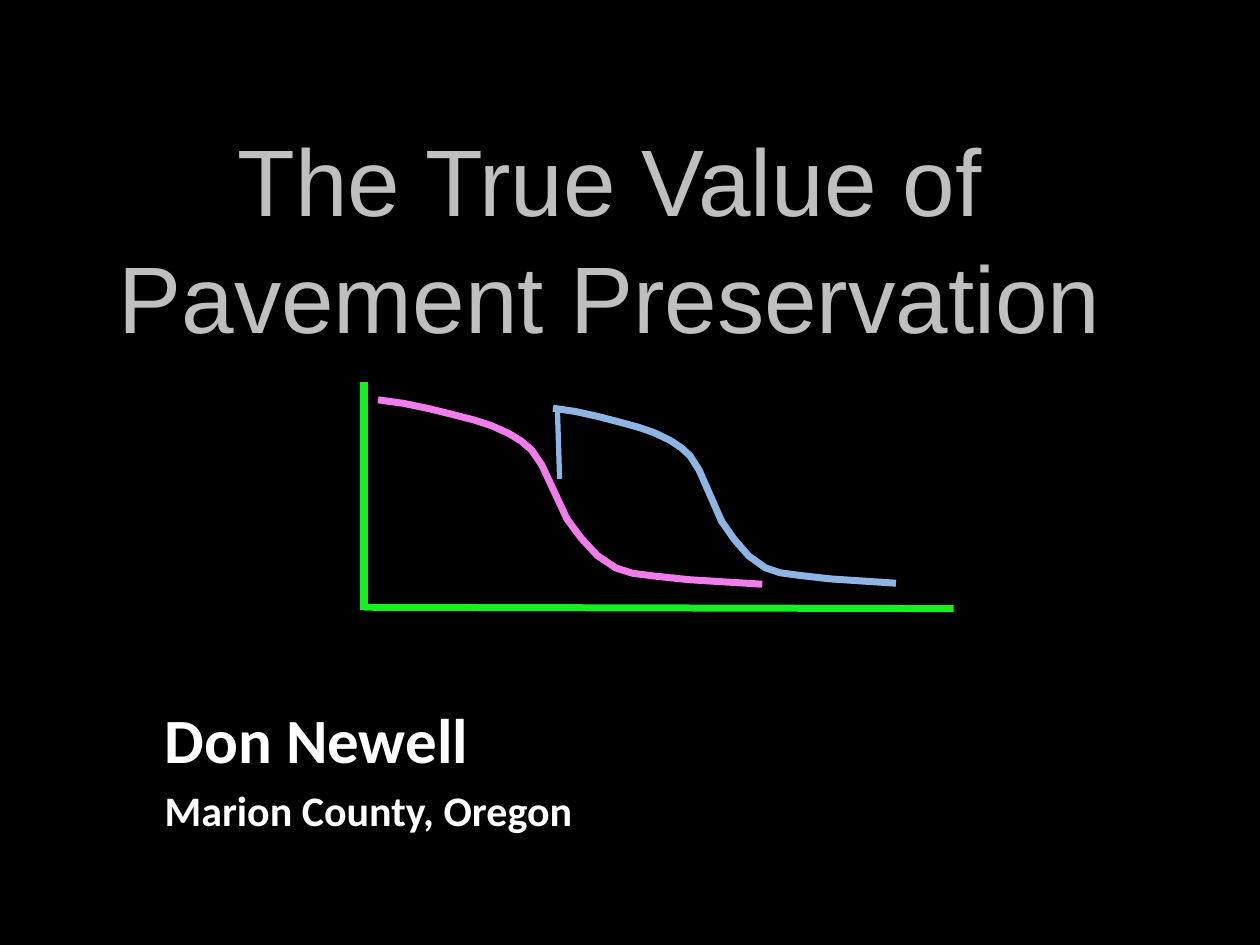
from lxml.etree import SubElement
from pptx import Presentation
from pptx.dml.color import RGBColor
from pptx.enum.shapes import MSO_CONNECTOR
from pptx.enum.text import MSO_ANCHOR, PP_ALIGN
from pptx.oxml.ns import qn
from pptx.util import Pt

BLACK = RGBColor(0x00, 0x00, 0x00)
WHITE = RGBColor(0xFF, 0xFF, 0xFF)
GRAY = RGBColor(0xBF, 0xBF, 0xBF)
GREEN = RGBColor(0x17, 0xEF, 0x21)
PINK = RGBColor(0xF2, 0x7C, 0xEC)
BLUE = RGBColor(0x8E, 0xB4, 0xE3)

presentation = Presentation()
presentation.slide_width = Pt(720)
presentation.slide_height = Pt(540)
slide = presentation.slides.add_slide(presentation.slide_layouts[6])
slide.background.fill.solid()
slide.background.fill.fore_color.rgb = BLACK

# Title
title = slide.shapes.add_textbox(Pt(42.5), Pt(45), Pt(612), Pt(178.5)).text_frame
title.word_wrap = True
title.vertical_anchor = MSO_ANCHOR.MIDDLE
title.text = "The True Value of\vPavement Preservation"
paragraph = title.paragraphs[0]
paragraph.alignment = PP_ALIGN.CENTER
paragraph.line_spacing = 1.04
paragraph.font.name = "Arial"
paragraph.font.size = Pt(54)
paragraph.font.color.rgb = GRAY

# Presenter
presenter = slide.shapes.add_textbox(Pt(87), Pt(397), Pt(504), Pt(103)).text_frame
presenter.word_wrap = True
presenter.text = "Don Newell\nMarion County, Oregon"
for paragraph, size in zip(presenter.paragraphs, (36, 24)):
    paragraph.space_before = Pt(size * 0.2)
    paragraph.font.name = "Calibri"
    paragraph.font.size = Pt(size)
    paragraph.font.bold = True
    paragraph.font.color.rgb = WHITE

# Pavement condition over time, without and with a treatment
diagram = slide.shapes.add_group_shape().shapes


def add_line(start, end, color, width):
    line = diagram.add_connector(
        MSO_CONNECTOR.STRAIGHT, *(Pt(value) for value in (*start, *end)))
    line.line.color.rgb = color
    line.line.width = Pt(width)
    SubElement(line._element.spPr, qn("a:effectLst"))


def add_decay_curve(left, top, width, height, color):
    """Draw the decay curve scaled to fill the given box."""
    points = [(Pt(left + x * width / 219.6), Pt(top + y * height / 105.8))
              for x, y in DECAY]
    builder = diagram.build_freeform(*points[0])
    builder.add_line_segments(points[1:], close=False)
    curve = builder.convert_to_shape()
    curve.shadow.inherit = False
    curve.fill.background()
    curve.line.color.rgb = color
    curve.line.width = Pt(4)


DECAY = [(0, 0), (14.4, 2), (28.8, 5), (41, 8), (54.7, 11.5), (64.8, 14.8),
         (74.9, 19.4), (82, 23.8), (87.8, 28.8), (93.6, 37.4), (108, 68.4),
         (116, 79.2), (125.3, 89.3), (136, 96.5), (145.4, 99.5),
         (157, 101), (177.8, 103.2), (219.6, 105.8)]

add_line((208, 347), (545, 347.8), GREEN, 4)
add_decay_curve(216, 228.5, 219.6, 105.4, PINK)
add_line((208, 218.2), (208, 348.5), GREEN, 5)
add_decay_curve(316, 233.3, 196, 100, BLUE)
add_line((318.5, 232.8), (319.8, 273.6), BLUE, 3)

presentation.save("out.pptx")
